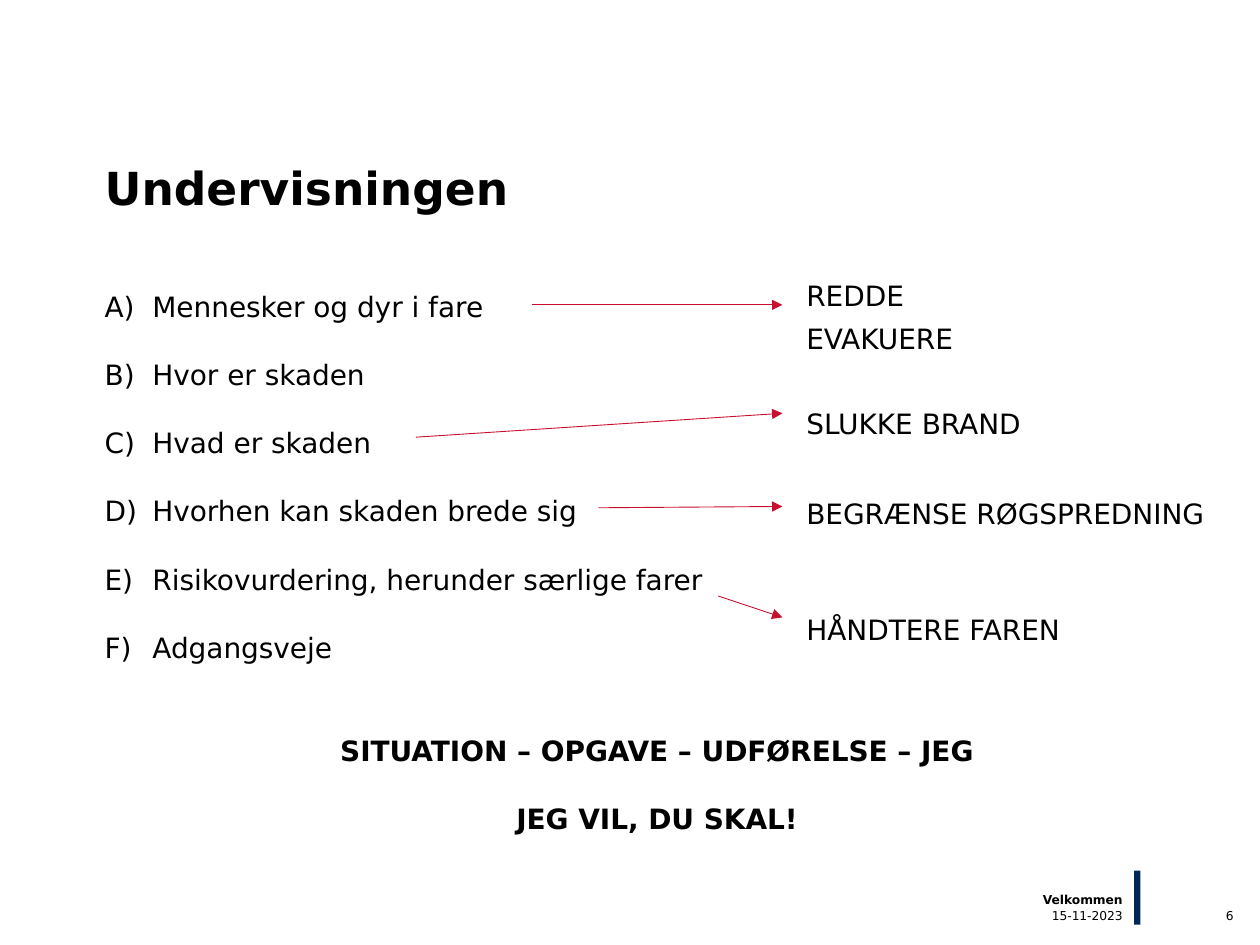
from dataclasses import dataclass

from lxml.etree import SubElement
from pptx import Presentation
from pptx.dml.color import RGBColor
from pptx.enum.shapes import MSO_CONNECTOR, MSO_SHAPE
from pptx.enum.text import MSO_ANCHOR, PP_ALIGN
from pptx.oxml.ns import qn
from pptx.util import Inches, Pt


@dataclass(frozen=True)
class Theme:
    font: str = "DejaVu Sans"
    ink: RGBColor = RGBColor(0x00, 0x00, 0x00)
    navy: RGBColor = RGBColor(0x00, 0x28, 0x55)
    red: RGBColor = RGBColor(0xC8, 0x10, 0x2E)
    title: int = 26
    body: int = 16
    footer: int = 7
    gap: float = 19.7


THEME = Theme()
COLS, ROWS = 100, 75
WIDTH, HEIGHT = Inches(10), Inches(7.5)

QUESTIONS = [
    "Mennesker og dyr i fare",
    "Hvor er skaden",
    "Hvad er skaden",
    "Hvorhen kan skaden brede sig",
    "Risikovurdering, herunder særlige farer",
    "Adgangsveje",
]
# Each task with the space before it in points
TASKS = {
    "REDDE": 0,
    "EVAKUERE": 0.7,
    "SLUKKE BRAND": 24.7,
    "BEGRÆNSE RØGSPREDNING": 27.6,
    "HÅNDTERE FAREN": 42.4,
}
ORDERS = ["SITUATION – OPGAVE – UDFØRELSE – JEG", "JEG VIL, DU SKAL!"]
ARROW_TIP = 62.1
# Start column, start row, end row
ARROWS = [(42.2, 24.2, 24.2), (33, 34.7, 32.8), (47.5, 40.3, 40.2), (57, 47.3, 49)]


def col(n):
    return int(WIDTH * n / COLS)


def row(n):
    return int(HEIGHT * n / ROWS)


def box(x, y, w, h):
    return col(x), row(y), col(w), row(h)


def add_text(s, place, lines, size, bold=False, align=PP_ALIGN.LEFT,
             anchor=MSO_ANCHOR.TOP, gaps=None, spacing=None, wrap=True):
    """Add a text box without margins; gaps holds the space before each line."""
    tf = s.shapes.add_textbox(*box(*place)).text_frame
    tf.margin_left = tf.margin_top = tf.margin_right = tf.margin_bottom = 0
    tf.word_wrap = wrap
    tf.vertical_anchor = anchor
    tf.text = "\n".join(lines)
    for i, p in enumerate(tf.paragraphs):
        p.alignment = align
        if spacing:
            p.line_spacing = spacing
        if i:
            p.space_before = Pt(gaps[i] if gaps else THEME.gap)
        for r in p.runs:
            r.font.name = THEME.font
            r.font.size = Pt(size)
            r.font.bold = bold
            r.font.color.rgb = THEME.ink
    return tf


def letter_paragraphs(tf):
    """Number the paragraphs A), B), C) with a hanging indent."""
    indent = col(3.8)
    for p in tf.paragraphs:
        pPr = p._p.get_or_add_pPr()
        pPr.set("marL", str(indent))
        pPr.set("indent", str(-indent))
        SubElement(pPr, qn("a:buFont"), typeface=THEME.font)
        SubElement(pPr, qn("a:buAutoNum"), type="alphaUcParenR")


def add_arrow(s, x, y, tip_y):
    line = s.shapes.add_connector(
        MSO_CONNECTOR.STRAIGHT, col(x), row(y), col(ARROW_TIP), row(tip_y))
    line.line.color.rgb = THEME.red
    line.line.width = Pt(0.5)
    spPr = line._element.spPr
    SubElement(spPr.find(qn("a:ln")), qn("a:tailEnd"), type="triangle")
    SubElement(spPr, qn("a:effectLst"))


def add_bar(s, place, color):
    sp = s.shapes.add_shape(MSO_SHAPE.RECTANGLE, *box(*place))
    sp.shadow.inherit = False
    sp.fill.solid()
    sp.fill.fore_color.rgb = color
    sp.line.fill.background()


def add_footer(s):
    add_bar(s, (90, 69.1, 0.5, 4.3), THEME.navy)
    add_text(s, (66.1, 72.1, 23, 1.2), ["15-11-2023"], THEME.footer,
             align=PP_ALIGN.RIGHT, anchor=MSO_ANCHOR.MIDDLE)
    add_text(s, (66.1, 70.2, 23, 1.8), ["Velkommen"], THEME.footer, bold=True,
             align=PP_ALIGN.RIGHT, anchor=MSO_ANCHOR.BOTTOM)
    add_text(s, (95.2, 72.1, 2.7, 1.2), ["6"], THEME.footer,
             align=PP_ALIGN.RIGHT, anchor=MSO_ANCHOR.MIDDLE, wrap=False)


def main():
    prs = Presentation()
    prs.slide_width, prs.slide_height = WIDTH, HEIGHT
    s = prs.slides.add_slide(prs.slide_layouts[6])

    add_text(s, (8.3, 12.6, 87.8, 12.9), ["Undervisningen"], THEME.title,
             bold=True, spacing=1.02)
    letter_paragraphs(add_text(s, (8.3, 23, 49.5, 40.2), QUESTIONS, THEME.body))
    add_text(s, (64, 21.4, 32.6, 40.2), TASKS, THEME.body,
             gaps=list(TASKS.values()), spacing=1.25)
    for arrow in ARROWS:
        add_arrow(s, *arrow)
    add_text(s, (22.9, 58.2, 58.5, 9.4), ORDERS, THEME.body, bold=True,
             align=PP_ALIGN.CENTER)
    add_footer(s)

    prs.save("out.pptx")


if __name__ == "__main__":
    main()
